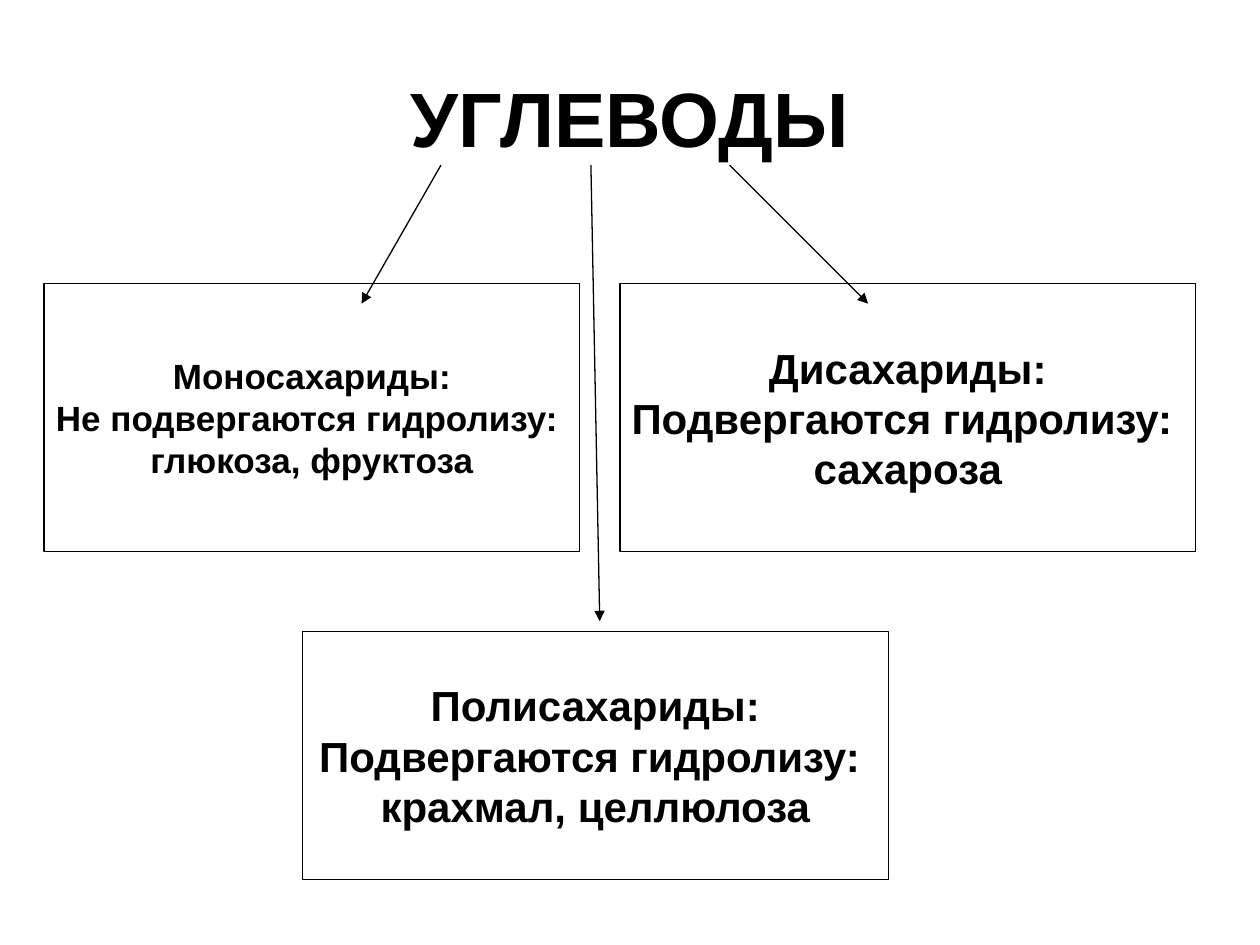
from pptx import Presentation
from pptx.dml.color import RGBColor
from pptx.enum.shapes import MSO_CONNECTOR as MC, MSO_SHAPE as MS
from pptx.enum.text import MSO_ANCHOR as MA, PP_ALIGN as PA
from pptx.oxml.ns import qn
from pptx.util import Inches, Pt
from lxml.etree import SubElement

BLACK = RGBColor(0, 0, 0)
WHITE = RGBColor(255, 255, 255)
ARROW_TOP = 1.31

BOXES = [
    ((0.35, 2.25, 4.25, 2.13), 20,
     ["Моносахариды:", "Не подвергаются гидролизу: ", "глюкоза, фруктоза"]),
    ((2.4, 5.01, 4.65, 1.97), 24,
     ["Полисахариды:", "Подвергаются гидролизу: ", "крахмал, целлюлоза"]),
    ((4.92, 2.25, 4.57, 2.13), 24,
     ["Дисахариды:", "Подвергаются гидролизу: ", "сахароза"]),
]
ARROWS = [(3.5, 2.87, 2.41), (5.79, 6.89, 2.41), (4.69, 4.76, 4.93)]


def add_box(s, box, size, lines, outlined=True, wrap=False):
    sp = s.shapes.add_shape(MS.RECTANGLE, *map(Inches, box))
    sp.shadow.inherit = False
    sp.fill.solid()
    sp.fill.fore_color.rgb = WHITE
    if outlined:
        sp.line.color.rgb = BLACK
        sp.line.width = Pt(0.75)
    else:
        sp.line.fill.background()
    tf = sp.text_frame
    tf.word_wrap = wrap
    tf.vertical_anchor = MA.MIDDLE
    tf.text = "\n".join(lines)
    font = {"name": "Arial", "size": Pt(size), "bold": True}
    for p in tf.paragraphs:
        p.alignment = PA.CENTER
        for r in p.runs:
            for key, value in font.items():
                setattr(r.font, key, value)
            r.font.color.rgb = BLACK


def add_arrow(s, x1, y1, x2, y2):
    cn = s.shapes.add_connector(MC.STRAIGHT, *map(Inches, (x1, y1, x2, y2)))
    cn.line.color.rgb = BLACK
    cn.line.width = Pt(0.75)
    SubElement(cn.line._get_or_add_ln(), qn("a:tailEnd"), type="triangle")
    SubElement(cn._element.spPr, qn("a:effectLst"))


def main():
    prs = Presentation()
    prs.slide_width, prs.slide_height = Inches(10), Inches(7.5)
    s = prs.slides.add_slide(prs.slide_layouts[6])
    add_box(s, (0.5, 0.3, 9, 1.25), 44, ["УГЛЕВОДЫ"], outlined=False, wrap=True)
    for box, size, lines in BOXES:
        add_box(s, box, size, lines)
    for x1, x2, y2 in ARROWS:
        add_arrow(s, x1, ARROW_TOP, x2, y2)
    prs.save("out.pptx")


if __name__ == "__main__":
    main()
